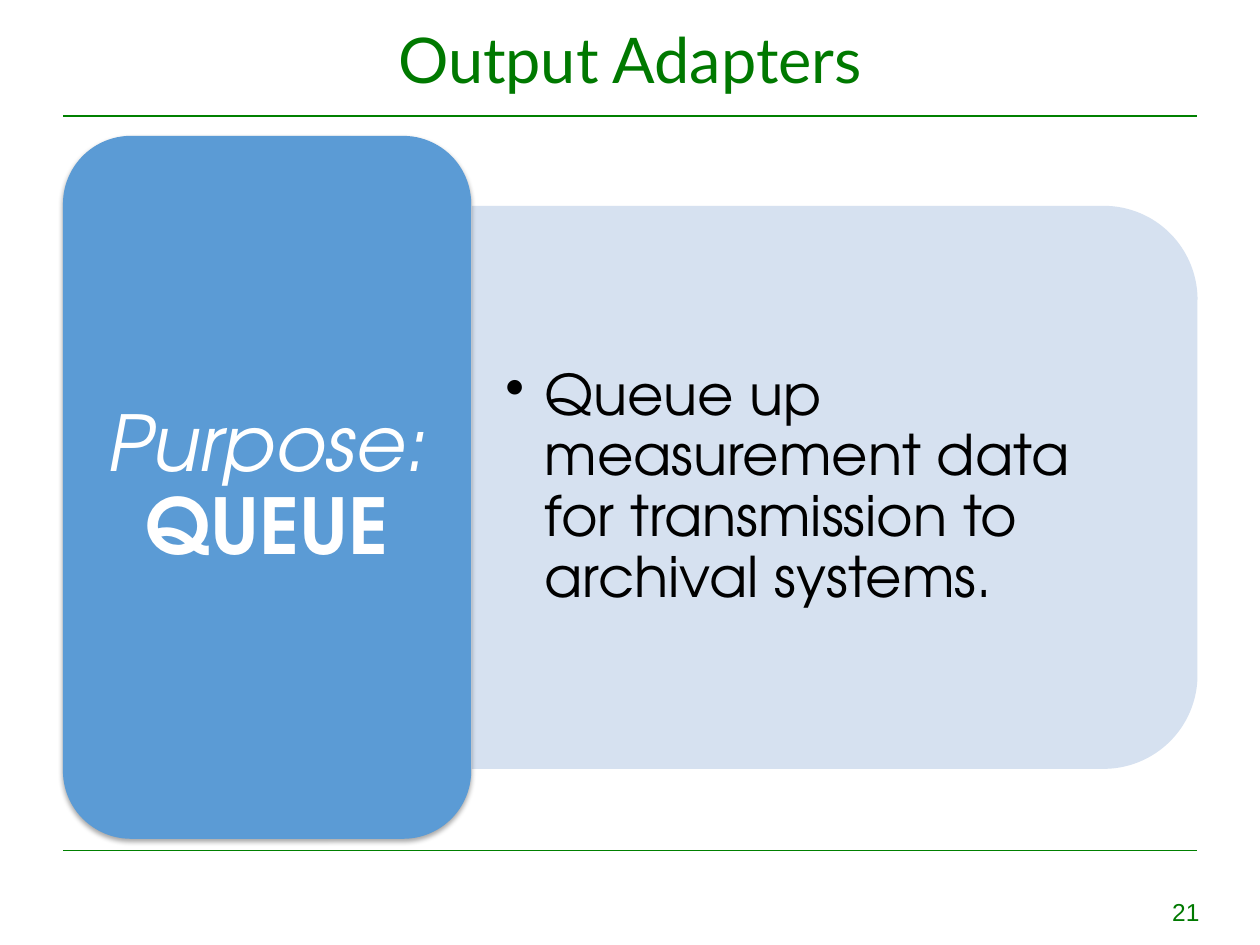
import dataclasses
import typing

import pptx
import pptx.dml.color
import pptx.enum.shapes
import pptx.enum.text
import pptx.oxml
import pptx.oxml.ns
import pptx.util

Cm = pptx.util.Cm
Pt = pptx.util.Pt
ALIGN = pptx.enum.text.PP_ALIGN
ANCHOR = pptx.enum.text.MSO_ANCHOR
SHAPE = pptx.enum.shapes.MSO_SHAPE
NS = pptx.oxml.ns.nsdecls("a")
Box = tuple[float, float, float, float]
LEFT, RIGHT = 1.27, 24.13
BODY_FONT = "TeX Gyre Adventor"


@dataclasses.dataclass
class Run:
    text: str
    font: dict[str, typing.Any]
    color: str


@dataclasses.dataclass
class Label:
    box: Box
    runs: list[Run]
    para: dict[str, typing.Any]
    inset: tuple[float, float] = (0.25, 0.13)
    anchor: typing.Any = ANCHOR.MIDDLE
    hanging: float = 0


@dataclasses.dataclass
class Panel:
    kind: typing.Any
    box: Box
    color: str
    rotation: int = 0
    opacity: int = 100
    shadow: bool = False


@dataclasses.dataclass
class Rule:
    y: float
    width: float


def rgb(value: str) -> pptx.dml.color.RGBColor:
    return pptx.dml.color.RGBColor.from_string(value)


def apply(target: typing.Any, values: dict[str, typing.Any]) -> None:
    for name, value in values.items():
        setattr(target, name, value)


def draw_rule(s: typing.Any, rule: Rule) -> None:
    y = Cm(rule.y)
    line = s.shapes.add_connector(
        pptx.enum.shapes.MSO_CONNECTOR.STRAIGHT, Cm(LEFT), y, Cm(RIGHT), y)
    line.line.color.rgb = rgb("008000")
    line.line.width = Pt(rule.width)
    line._element.spPr.append(pptx.oxml.parse_xml(f"<a:effectLst {NS}/>"))


def draw_panel(s: typing.Any, panel: Panel) -> None:
    sp = s.shapes.add_shape(panel.kind, *map(Cm, panel.box))
    apply(sp, {"rotation": panel.rotation})
    sp.shadow.inherit = False
    sp.fill.solid()
    sp.fill.fore_color.rgb = rgb(panel.color)
    sp.line.fill.background()
    props = sp._element.spPr
    if panel.opacity < 100:
        color = props.find(pptx.oxml.ns.qn("a:solidFill"))[0]
        color.append(pptx.oxml.parse_xml(
            f'<a:alpha {NS} val="{panel.opacity * 1000}"/>'))
    if panel.shadow:
        effects = props.find(pptx.oxml.ns.qn("a:effectLst"))
        effects.append(pptx.oxml.parse_xml(
            f'<a:outerShdw {NS} blurRad="{Pt(3.1)}" dist="{Pt(1.8)}" '
            'dir="5400000" rotWithShape="0"><a:srgbClr val="000000">'
            '<a:alpha val="35000"/></a:srgbClr></a:outerShdw>'))


def draw_label(s: typing.Any, label: Label) -> None:
    tf = s.shapes.add_textbox(*map(Cm, label.box)).text_frame
    x, y = map(Cm, label.inset)
    apply(tf, {"word_wrap": True, "vertical_anchor": label.anchor,
               "margin_left": x, "margin_right": x,
               "margin_top": y, "margin_bottom": y})
    p = tf.paragraphs[0]
    apply(p, label.para)
    if label.hanging:
        props = p._p.get_or_add_pPr()
        indent = Cm(label.hanging)
        props.set("marL", str(indent))
        props.set("indent", str(-indent))
        props.append(pptx.oxml.parse_xml(f'<a:buChar {NS} char="•"/>'))
    for run in label.runs:
        r = p.add_run()
        r.text = run.text
        apply(r.font, run.font)
        r.font.color.rgb = rgb(run.color)


RULES = [Rule(2.34, 1.5), Rule(17.15, 0.75)]
PANELS = [
    Panel(SHAPE.ROUND_2_SAME_RECTANGLE, (11.15, 2.51, 11.35, 14.63),
          "D2DEEF", rotation=90, opacity=90),
    Panel(SHAPE.ROUNDED_RECTANGLE, (LEFT, 2.74, 8.23, 14.17),
          "5B9BD5", shadow=True),
]
PURPOSE = {"name": BODY_FONT, "size": Pt(44)}
LABELS = [
    Label((LEFT, 0, RIGHT - LEFT, 2.34),
          [Run("Output Adapters", {"name": "Lato", "size": Pt(36)}, "007900")],
          {"alignment": ALIGN.CENTER}),
    Label((9.5, 4.72, 14.07, 10.24),
          [Run("Queue up measurement data for transmission to archival systems.",
               {"name": BODY_FONT, "size": Pt(32)}, "000000")],
          {"alignment": ALIGN.LEFT, "line_spacing": 0.9},
          inset=(0.69, 0.36), hanging=0.79),
    Label((1.68, 3.15, 7.42, 13.39),
          [Run("Purpose: ", PURPOSE | {"italic": True}, "FFFFFF"),
           Run("QUEUE", PURPOSE | {"bold": True}, "FFFFFF")],
          {"alignment": ALIGN.CENTER, "line_spacing": 0.9},
          inset=(0.46, 0.23)),
    Label((22.91, 17.96, 1.52, 0.86),
          [Run("21", {"name": "Arial", "size": Pt(14)}, "007900")],
          {"alignment": ALIGN.RIGHT}, anchor=ANCHOR.TOP),
]


def main() -> None:
    prs = pptx.Presentation()
    apply(prs, {"slide_width": Cm(25.4), "slide_height": Cm(19.05)})
    s = prs.slides.add_slide(prs.slide_layouts[6])
    for rule in RULES:
        draw_rule(s, rule)
    for panel in PANELS:
        draw_panel(s, panel)
    for label in LABELS:
        draw_label(s, label)
    prs.save("out.pptx")


if __name__ == "__main__":
    main()
